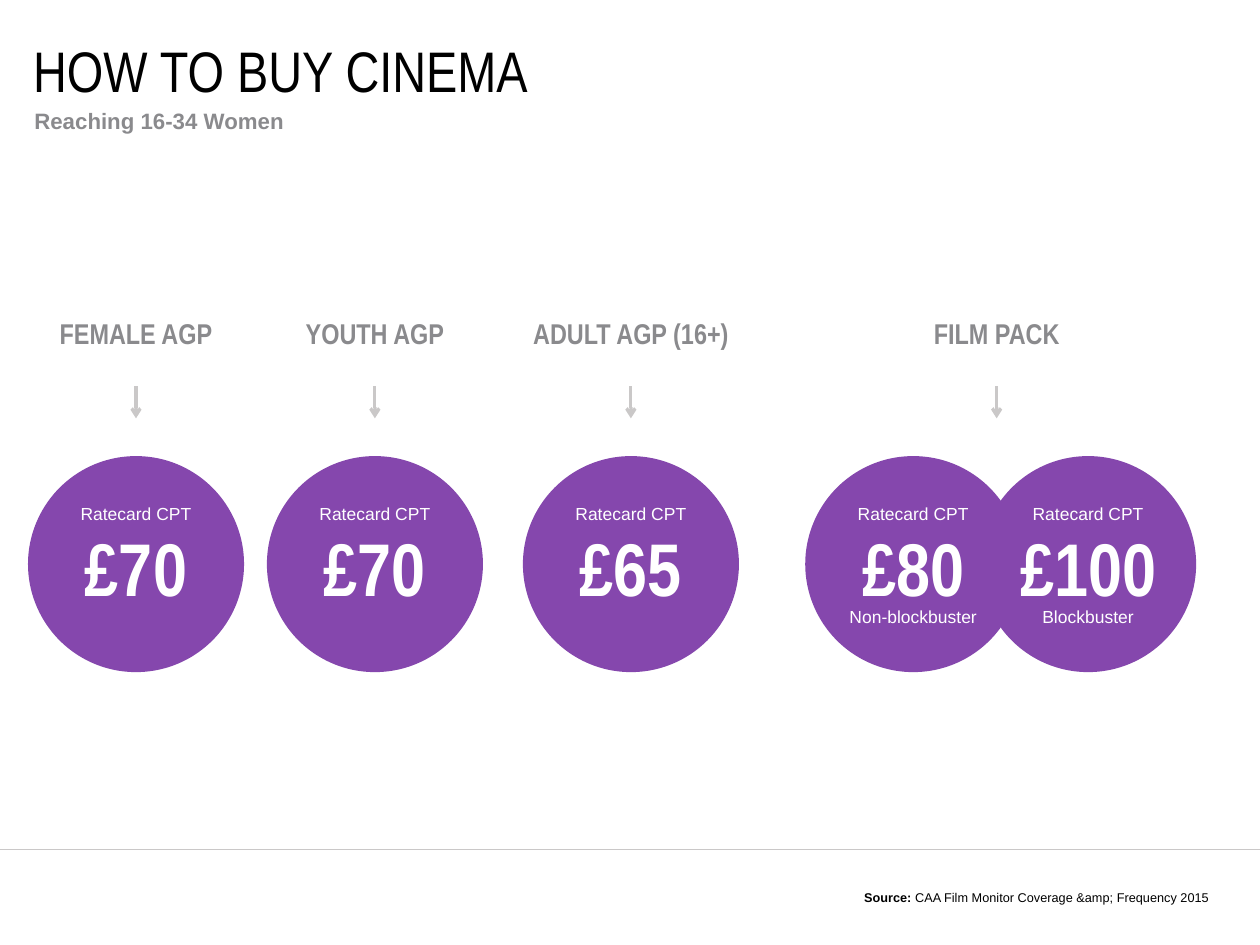
import dataclasses
import typing

import lxml.etree
import pptx
import pptx.dml.color
import pptx.enum.shapes
import pptx.enum.text
import pptx.oxml.ns
import pptx.util

Inches = pptx.util.Inches
Align = pptx.enum.text.PP_ALIGN
Anchor = pptx.enum.text.MSO_ANCHOR
Box = tuple[float, float, float, float]

PURPLE, WHITE, BLACK = "8547AD", "FFFFFF", "000000"
GREY, PALE_GREY = "8A8A8D", "CAC8C8"
NARROW = "Arial Narrow"
CM_PER_INCH = 2.54
SLIDE_WIDTH, SLIDE_HEIGHT = 28 / CM_PER_INCH, 21 / CM_PER_INCH
COLUMN_WIDTH, CIRCLE_SIZE, CIRCLE_TOP = 2.38, 1.89, 3.99


@dataclasses.dataclass
class Route:
    name: str
    center: float


@dataclasses.dataclass
class Rate:
    price: str
    center: float
    film_type: str = ""


ROUTES = [
    Route("FEMALE AGP", 1.19),
    Route("YOUTH AGP", 3.28),
    Route("ADULT AGP (16+)", 5.52),
    Route("FILM PACK", 8.72),
]
RATES = [
    Rate("£70", 1.19),
    Rate("£70", 3.28),
    Rate("£65", 5.52),
    Rate("£80", 7.99, "Non-blockbuster"),
    Rate("£100", 9.52, "Blockbuster"),
]


def rgb(color: str) -> pptx.dml.color.RGBColor:
    return pptx.dml.color.RGBColor.from_string(color)


def column(center: float, top: float, height: float) -> Box:
    return center - COLUMN_WIDTH / 2, top, COLUMN_WIDTH, height


def add_text(slide: typing.Any, text: str, box: Box, *, size: float, color: str,
             font: str = "Arial", bold: bool = False, lead: str = "",
             align: Align = Align.LEFT, anchor: Anchor = Anchor.TOP,
             inset: tuple[float, float] = (0.1, 0.04),
             line_spacing: float | None = None, fill: str | None = None) -> None:
    """Add a text box; lead is a bold opening before the text."""
    text_box = slide.shapes.add_textbox(*map(Inches, box))
    if fill:
        text_box.fill.solid()
        text_box.fill.fore_color.rgb = rgb(fill)
    frame = text_box.text_frame
    frame.word_wrap = True
    frame.vertical_anchor = anchor
    frame.margin_left = frame.margin_right = Inches(inset[0])
    frame.margin_top = frame.margin_bottom = Inches(inset[1])
    paragraph = frame.paragraphs[0]
    paragraph.alignment = align
    if line_spacing:
        paragraph.line_spacing = pptx.util.Pt(line_spacing)
    for content, is_bold in ((lead, True), (text, bold)):
        if content:
            run = paragraph.add_run()
            run.text = content
            run.font.name = font
            run.font.size = pptx.util.Pt(size)
            run.font.bold = is_bold
            run.font.color.rgb = rgb(color)


def add_line(slide: typing.Any, start: tuple[float, float], end: tuple[float, float],
             width: float, arrow: bool = False) -> None:
    line = slide.shapes.add_connector(
        pptx.enum.shapes.MSO_CONNECTOR.STRAIGHT, *map(Inches, (*start, *end)))
    line.line.color.rgb = rgb(PALE_GREY)
    line.line.width = pptx.util.Pt(width)
    if arrow:
        lxml.etree.SubElement(line.line._get_or_add_ln(),
                              pptx.oxml.ns.qn("a:tailEnd"), type="arrow")
    lxml.etree.SubElement(line._element.spPr, pptx.oxml.ns.qn("a:effectLst"))


def add_circle(slide: typing.Any, center: float) -> None:
    circle = slide.shapes.add_shape(
        pptx.enum.shapes.MSO_SHAPE.OVAL,
        *map(Inches, (center - CIRCLE_SIZE / 2, CIRCLE_TOP, CIRCLE_SIZE, CIRCLE_SIZE)))
    circle.shadow.inherit = False
    circle.fill.solid()
    circle.fill.fore_color.rgb = rgb(PURPLE)
    circle.line.fill.background()


def add_route(slide: typing.Any, route: Route) -> None:
    add_text(slide, route.name, column(route.center, 2.64, 0.54), size=18, color=GREY,
             font=NARROW, bold=True, align=Align.CENTER, anchor=Anchor.MIDDLE,
             inset=(0.1, 0.12), fill=WHITE)
    add_line(slide, (route.center, 3.38), (route.center, 3.66), 2, arrow=True)


def add_rate(slide: typing.Any, rate: Rate) -> None:
    add_text(slide, "Ratecard CPT", column(rate.center, 4.36, 0.26),
             size=11, color=WHITE, align=Align.CENTER)
    add_text(slide, rate.price, column(rate.center, 4.53, 0.87), size=47, color=WHITE,
             font=NARROW, bold=True, align=Align.CENTER)
    if rate.film_type:
        add_text(slide, rate.film_type, column(rate.center, 5.26, 0.26),
                 size=11, color=WHITE, align=Align.CENTER)


def main() -> None:
    deck = pptx.Presentation()
    deck.slide_width, deck.slide_height = Inches(SLIDE_WIDTH), Inches(SLIDE_HEIGHT)
    slide = deck.slides.add_slide(deck.slide_layouts[6])

    add_line(slide, (0, 7.43), (SLIDE_WIDTH, 7.43), 0.5)
    add_text(slide, "HOW TO BUY CINEMA", (0.29, 0.38, 10.18, 0.45), size=36,
             color=BLACK, font=NARROW, anchor=Anchor.MIDDLE, inset=(0, 0))
    add_text(slide, "Reaching 16-34 Women", (0.3, 0.89, 10.19, 0.48), size=14,
             color=GREY, bold=True, inset=(0, 0.05), line_spacing=16.8)
    for route in ROUTES:
        add_route(slide, route)
    for rate in RATES:
        add_circle(slide, rate.center)
    for rate in RATES:
        add_rate(slide, rate)
    add_text(slide, "CAA Film Monitor Coverage &amp; Frequency 2015",
             (4.84, 7.73, 5.84, 0.24), size=8, color=BLACK, lead="Source: ",
             align=Align.RIGHT, anchor=Anchor.BOTTOM, inset=(0.1, 0.05))

    deck.save("out.pptx")


if __name__ == "__main__":
    main()
